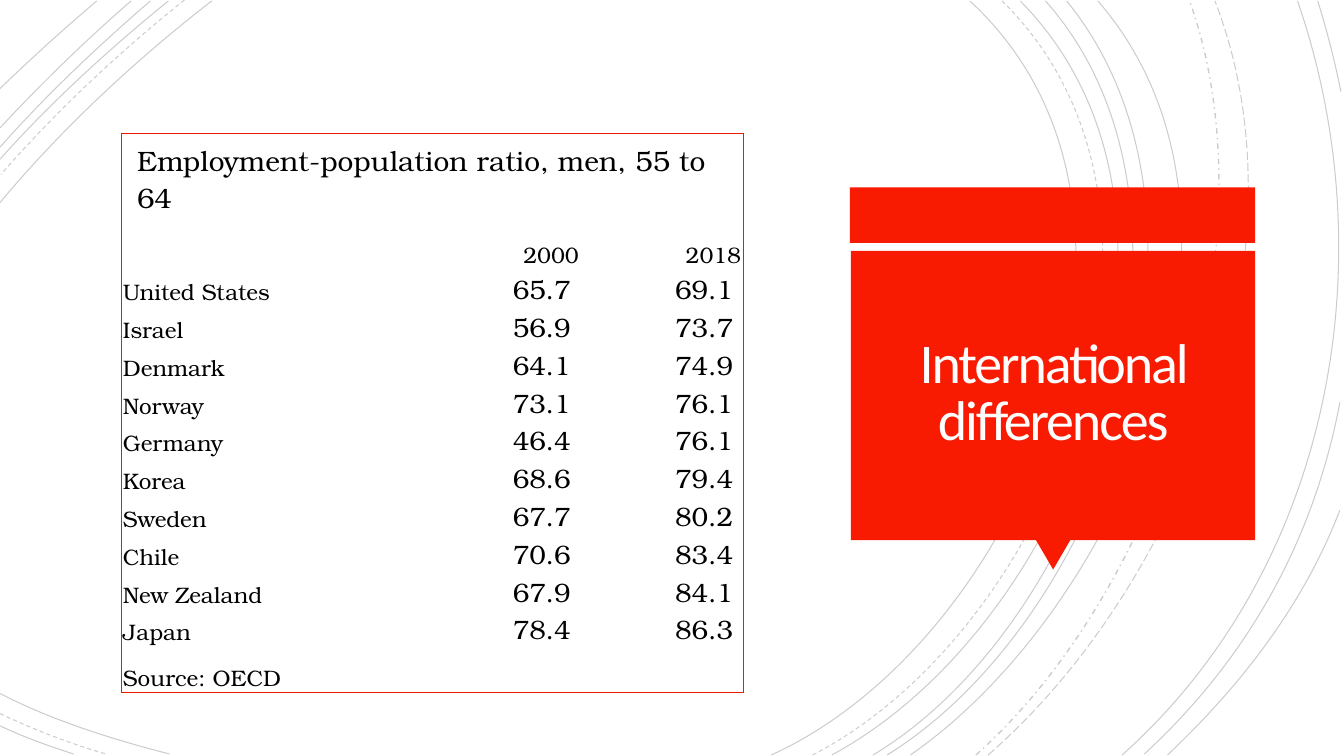
from lxml.etree import SubElement
from pptx import Presentation
from pptx.dml.color import RGBColor
from pptx.enum.dml import MSO_LINE_DASH_STYLE as Dash
from pptx.enum.shapes import MSO_SHAPE as Preset
from pptx.enum.text import MSO_ANCHOR as Anchor, PP_ALIGN as Align
from pptx.oxml.ns import qn
from pptx.util import Inches, Pt

# The grid has 13.33 columns and 7.5 rows of one inch each
CELL = Inches(1)
COLUMNS, ROWS = 13.33, 7.5

RED = RGBColor(0xF8, 0x1B, 0x02)
BORDER_RED = RGBColor(0xED, 0x1A, 0x02)
OFF_WHITE = RGBColor(0xFF, 0xFE, 0xFF)
BLACK = RGBColor(0, 0, 0)
TITLE_FONT, TABLE_FONT = "Calibri", "TeX Gyre Bonum"
PLAIN_TABLE_STYLE = "{2D5ABB26-0587-4C30-8999-92F81FD0307C}"

# Background arcs by dash style: start, two control points, end
ARCS = {
    Dash.SOLID: [
        ((7.65, 7.49), (10.16, 6.35), (11.88, 2.09), (9.62, 0.01)),
        ((0, 6.88), (0.52, 7.15), (1.13, 7.34), (1.68, 7.48)),
        ((2.1, 0.01), (1.34, 0.6), (0.62, 1.27), (0, 2.01)),
        ((8.25, 7.49), (10.61, 6.22), (12.21, 2.13), (10.12, 0.01)),
        ((0, 7.2), (0.23, 7.31), (0.48, 7.4), (0.73, 7.48)),
        ((1.67, 0.01), (1.08, 0.49), (0.51, 1.01), (0, 1.58)),
        ((8.66, 7.49), (10.87, 6.16), (12.21, 2.08), (10.37, 0.01)),
        ((1.49, 0.01), (0.97, 0.46), (0.46, 0.94), (0, 1.46)),
        ((8.8, 7.49), (11, 6.12), (12.33, 2.16), (10.58, 0.01)),
        ((1.3, 0.01), (0.84, 0.41), (0.41, 0.83), (0, 1.27)),
        ((9.03, 7.49), (11.13, 6.03), (12.78, 2.2), (10.89, 0.01)),
        ((0.96, 0.01), (0.63, 0.29), (0.31, 0.58), (0, 0.88)),
        ((11.13, 7.49), (13.2, 5.64), (13.76, 2.59), (12.87, 0.01)),
        ((11.35, 7.48), (12.38, 6.53), (13.03, 5.36), (13.29, 3.99)),
        ((13.3, 0.91), (13.24, 0.61), (13.16, 0.3), (13.07, 0.01)),
        ((11.58, 7.49), (12.31, 6.8), (12.93, 6), (13.29, 5.06)),
    ],
    Dash.DASH: [
        ((8.06, 7.49), (10.46, 6.25), (12.08, 2.12), (9.94, 0.01)),
        ((0, 7.08), (0.34, 7.24), (0.7, 7.38), (1.05, 7.48)),
        ((1.83, 0), (1.18, 0.52), (0.56, 1.1), (0.01, 1.73)),
    ],
    Dash.DASH_DOT: [((9.68, 7.49), (11.54, 5.83), (12.65, 2.41), (11.8, 0.01))],
    Dash.LONG_DASH: [((9.8, 7.49), (11.73, 5.81), (13.02, 2.51), (12.05, 0.01))],
}

TABLE_TITLE = "Employment-population ratio, men, 55 to 64"
YEARS = ("", "2000", "2018")
RATIOS = [
    ("United States", "65.7", "69.1"),
    ("Israel", "56.9", "73.7"),
    ("Denmark", "64.1", "74.9"),
    ("Norway", "73.1", "76.1"),
    ("Germany", "46.4", "76.1"),
    ("Korea", "68.6", "79.4"),
    ("Sweden", "67.7", "80.2"),
    ("Chile", "70.6", "83.4"),
    ("New Zealand", "67.9", "84.1"),
    ("Japan", "78.4", "86.3"),
]
SOURCE = ("Source: OECD", "", "")
COLUMN_WIDTHS = (2.95, 1.61, 1.61)
ROW_HEIGHTS = [0.91, 0.44] + [3.75 / len(RATIOS)] * len(RATIOS) + [0.45]


def grid(*lengths):
    return [round(length * CELL) for length in lengths]


def add_arc(slide, arc, dash):
    start, *others = [grid(*point) for point in arc]
    builder = slide.shapes.build_freeform(*start)
    builder.add_line_segments(others, close=False)
    shape = builder.convert_to_shape()

    # Turn the three segments into one cubic curve
    outline = shape._element.find(".//" + qn("a:path"))
    curve = SubElement(outline, qn("a:cubicBezTo"))
    for segment in outline.findall(qn("a:lnTo")):
        curve.append(segment[0])
        outline.remove(segment)

    shape.shadow.inherit = False
    shape.fill.background()
    shape.line.color.rgb = BLACK
    shape.line.width = Pt(1 if dash == Dash.DASH_DOT else 0.75)
    shape.line.dash_style = dash
    color = shape.line._ln.find(".//" + qn("a:srgbClr"))
    SubElement(color, qn("a:alpha"), val="20000")


def add_block(slide, preset, *box, rotation=0):
    shape = slide.shapes.add_shape(preset, *grid(*box))
    shape.shadow.inherit = False
    shape.fill.solid()
    shape.fill.fore_color.rgb = RED
    shape.line.fill.background()
    shape.rotation = rotation


def add_title(slide, text, *box):
    frame = slide.shapes.add_textbox(*grid(*box)).text_frame
    frame.word_wrap = True
    frame.vertical_anchor = Anchor.MIDDLE
    frame.margin_left = frame.margin_right = Inches(0.25)
    frame.margin_top = frame.margin_bottom = Inches(0.25)
    paragraph = frame.paragraphs[0]
    paragraph.alignment = Align.CENTER
    paragraph.line_spacing = 0.85
    run = paragraph.add_run()
    run.text = text
    run.font.name, run.font.size = TITLE_FONT, Pt(40)
    run.font.color.rgb = OFF_WHITE
    run.font._element.set("spc", "-150")


def set_borders(cell, sides):
    properties = cell._tc.get_or_add_tcPr()
    for side in sides:
        line = SubElement(properties, qn("a:ln" + side), w=str(Pt(0.75)))
        fill = SubElement(line, qn("a:solidFill"))
        SubElement(fill, qn("a:srgbClr"), val=str(BORDER_RED))
    cell.fill.background()


def fill_cell(cell, text, size, align, anchor, margins):
    cell.text = text
    cell.vertical_anchor = anchor
    (cell.margin_left, cell.margin_top,
     cell.margin_right, cell.margin_bottom) = grid(*margins)
    paragraph = cell.text_frame.paragraphs[0]
    paragraph.alignment = align
    paragraph.font.name, paragraph.font.size = TABLE_FONT, Pt(size)
    paragraph.font.color.rgb = BLACK


def add_ratio_table(slide, left, top):
    rows, columns = len(ROW_HEIGHTS), len(COLUMN_WIDTHS)
    table = slide.shapes.add_table(
        rows, columns, *grid(left, top, sum(COLUMN_WIDTHS), sum(ROW_HEIGHTS))).table
    table.first_row = table.horz_banding = False
    table._tbl.tblPr.find(qn("a:tableStyleId")).text = PLAIN_TABLE_STYLE
    for column, width in zip(table.columns, COLUMN_WIDTHS):
        column.width = Inches(width)
    for row, height in zip(table.rows, ROW_HEIGHTS):
        row.height = Inches(height)

    # Outer frame only; the heading cell spans the full width
    for r in range(rows):
        for c in range(columns):
            edges = {"L": c == 0, "R": c == columns - 1 or r == c == 0,
                     "T": r == 0, "B": r == rows - 1}
            set_borders(table.cell(r, c), [side for side, on in edges.items() if on])

    # Heading across all columns, then years, ratios and source
    table.cell(0, 0).merge(table.cell(0, columns - 1))
    fill_cell(table.cell(0, 0), TABLE_TITLE, 20, Align.LEFT, Anchor.TOP,
              (0.16, 0.08, 0.16, 0.08))
    for r, texts in enumerate([YEARS, *RATIOS, SOURCE], start=1):
        for c, text in enumerate(texts):
            is_ratio = c > 0 and 1 < r < rows - 1
            fill_cell(table.cell(r, c), text, 19 if is_ratio else 16,
                      Align.RIGHT if c else Align.LEFT, Anchor.BOTTOM,
                      (0.02, 0.02, 0.1 if is_ratio else 0.02, 0))


def main():
    presentation = Presentation()
    presentation.slide_width, presentation.slide_height = grid(COLUMNS, ROWS)
    slide = presentation.slides.add_slide(presentation.slide_layouts[6])

    # Background arcs
    for dash, arcs in ARCS.items():
        for arc in arcs:
            add_arc(slide, arc, dash)

    # Title callout
    add_block(slide, Preset.RECTANGLE, 8.43, 1.86, 4.02, 0.55)
    add_block(slide, Preset.ISOSCELES_TRIANGLE, 10.27, 5.35, 0.35, 0.3, rotation=180)
    add_block(slide, Preset.RECTANGLE, 8.44, 2.49, 4.01, 2.87)
    add_title(slide, "International differences", 8.53, 2.57, 3.83, 2.69)

    # Employment table
    add_ratio_table(slide, 1.2, 1.32)
    presentation.save("out.pptx")


if __name__ == "__main__":
    main()
